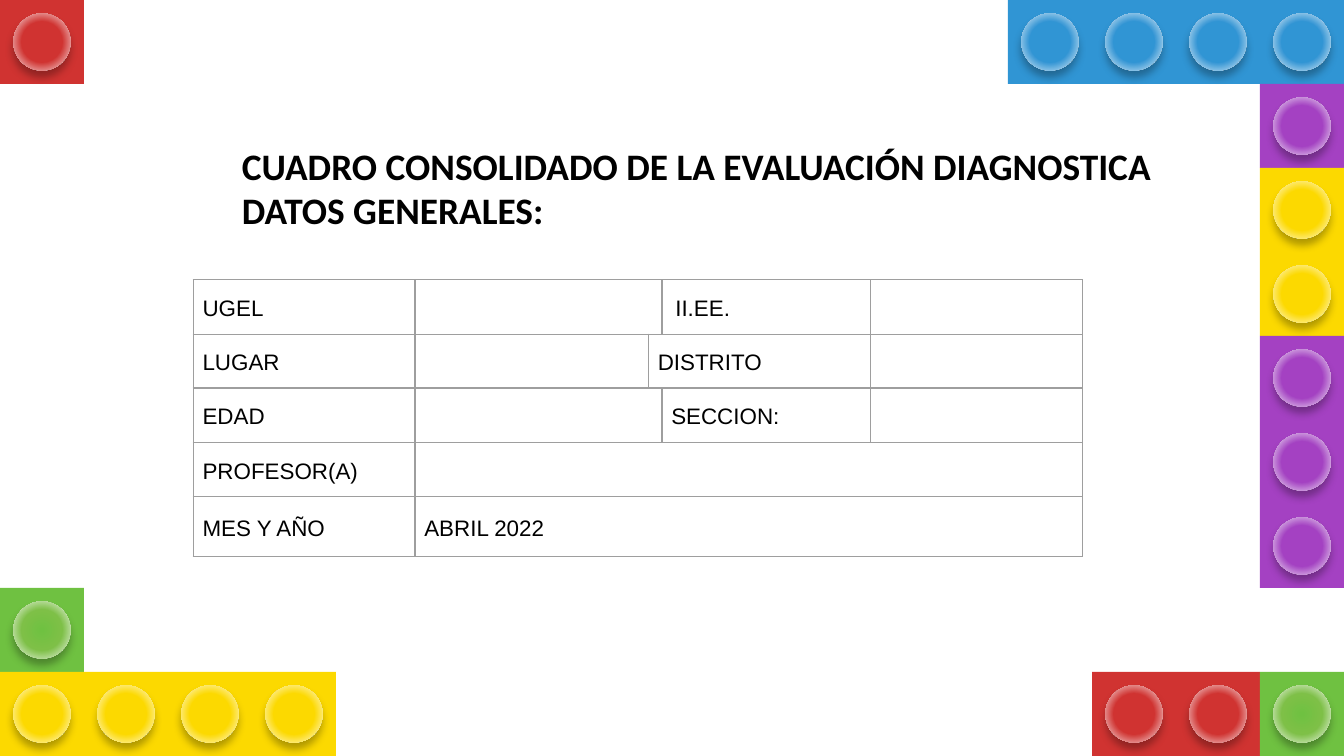
from lxml import etree
from pptx import Presentation
from pptx.dml.color import RGBColor
from pptx.enum.shapes import MSO_SHAPE
from pptx.enum.text import MSO_ANCHOR, MSO_AUTO_SIZE, PP_ALIGN
from pptx.oxml.ns import qn
from pptx.util import Inches, Pt

SQUARE, CIRCLE = MSO_SHAPE.RECTANGLE, MSO_SHAPE.OVAL
TOP, MIDDLE = MSO_ANCHOR.TOP, MSO_ANCHOR.MIDDLE
LEFT = PP_ALIGN.LEFT
NO_AUTOFIT = MSO_AUTO_SIZE.NONE
TITLE_ONLY = 5

GRID_COLUMNS, GRID_ROWS = 16, 9
SLIDE_WIDTH = Inches(10)
UNIT = SLIDE_WIDTH // GRID_COLUMNS
STUD_SIZE = 0.68
STUD_INSET = (1 - STUD_SIZE) / 2

RED, BLUE, PURPLE, YELLOW, GREEN = "D03331", "3095D4", "A441C2", "FCD900", "6FC141"
GREEN_GLOW = "7EC047"
WHITE, BLACK, GREY = "FFFFFF", "000000", "9E9E9E"

BRICKS = [
    (0, 0, 1, 1, RED),
    (12, 0, 4, 1, BLUE),
    (15, 1, 1, 1, PURPLE),
    (15, 2, 1, 2, YELLOW),
    (15, 4, 1, 3, PURPLE),
    (0, 7, 1, 1, GREEN),
    (0, 8, 4, 1, YELLOW),
    (13, 8, 2, 1, RED),
    (15, 8, 1, 1, GREEN),
]

TITLE_LINES = ["CUADRO CONSOLIDADO DE LA EVALUACIÓN DIAGNOSTICA", "DATOS GENERALES:"]
TABLE_COLUMNS = [2.64, 2.78, 0.16, 2.48, 2.53]
TABLE_ROWS = [0.65, 0.64, 0.65, 0.64, 0.72]
TABLE_TEXT = [
    ["UGEL", "", "", "II.EE.", ""],
    ["LUGAR", "", "DISTRITO", "", ""],
    ["EDAD", "", "", "SECCION:", ""],
    ["PROFESOR(A)", "", "", "", ""],
    ["MES Y AÑO", "ABRIL 2022", "", "", ""],
]
MERGES = [(0, 1, 2), (1, 2, 3), (2, 1, 2), (3, 1, 4), (4, 1, 4)]

TITLE_FONT = {"name": "Calibri", "size": Pt(20), "bold": True}
CELL_FONT = {"name": "Arial", "size": Pt(12), "bold": False}


def units(*counts):
    return [round(count * UNIT) for count in counts]


def rgb(color):
    return RGBColor.from_string(color)


def apply_format(target, values):
    for name, value in values.items():
        setattr(target, name, value)


def add_node(parent, tag, **attributes):
    node = etree.SubElement(parent, qn(tag))
    for name, value in attributes.items():
        node.set(name, str(value))
    return node


def add_color(parent, color):
    return add_node(parent, "a:srgbClr", val=color)


def write_text(para, text, font, line_spacing):
    apply_format(para, {"alignment": LEFT, "line_spacing": line_spacing})
    span = para.add_run()
    span.text = text
    apply_format(span.font, font)
    span.font.color.rgb = rgb(BLACK)


def add_plain_shape(page, kind, left, top, width, height):
    shape = page.shapes.add_shape(kind, *units(left, top, width, height))
    shape.shadow.inherit = False
    shape.line.fill.background()
    return shape


def add_stud(page, column, row, color):
    stud = add_plain_shape(
        page, CIRCLE, column + STUD_INSET, row + STUD_INSET, STUD_SIZE, STUD_SIZE
    )
    properties = stud.element.spPr
    gradient = etree.Element(qn("a:gradFill"), rotWithShape="1")
    stops = add_node(gradient, "a:gsLst")
    middle = GREEN_GLOW if color == GREEN else color
    for position, stop_color in ((0, color), (50000, middle), (100000, WHITE)):
        add_color(add_node(stops, "a:gs", pos=position), stop_color)
    focus = add_node(gradient, "a:path", path="circle")
    add_node(focus, "a:fillToRect", l=50000, t=50000, r=50000, b=50000)
    properties.find(qn("a:prstGeom")).addnext(gradient)
    shadow = add_node(
        properties.find(qn("a:effectLst")), "a:outerShdw",
        blurRad=Pt(4.5), dist=Pt(3.8), dir=5400000, algn="bl", rotWithShape=0,
    )
    add_node(add_color(shadow, BLACK), "a:alpha", val=29000)


def add_brick(page, column, row, width, height, color):
    brick = add_plain_shape(page, SQUARE, column, row, width, height)
    brick.fill.solid()
    brick.fill.fore_color.rgb = rgb(color)
    for across in range(width):
        for down in range(height):
            add_stud(page, column + across, row + down, color)


def format_title(page):
    box = page.shapes.title
    left, top, width, height, inset = units(1.94, 1.62, 12.13, 1.73, 0.94)
    apply_format(box, {"left": left, "top": top, "width": width, "height": height})
    frame = box.text_frame
    apply_format(frame, {
        "word_wrap": True, "auto_size": NO_AUTOFIT, "vertical_anchor": TOP,
        "margin_left": inset, "margin_right": 0, "margin_top": Inches(0.05),
    })
    for index, line in enumerate(TITLE_LINES):
        para = frame.add_paragraph() if index else frame.paragraphs[0]
        write_text(para, line, TITLE_FONT, 1.0)


def draw_borders(cell):
    properties = cell._tc.get_or_add_tcPr()
    for index, side in enumerate(("a:lnL", "a:lnR", "a:lnT", "a:lnB")):
        line = etree.Element(qn(side), w=str(Pt(0.75)))
        add_color(add_node(line, "a:solidFill"), GREY)
        properties.insert(index, line)


def format_cell(cell, text):
    apply_format(cell, {
        "vertical_anchor": MIDDLE, "margin_left": Inches(0.07),
        "margin_right": Inches(0.07), "margin_top": 0, "margin_bottom": 0,
    })
    cell.fill.background()
    draw_borders(cell)
    if text:
        write_text(cell.text_frame.paragraphs[0], text, CELL_FONT, 1.15)


def add_data_table(page):
    area = units(2.3, 3.33, sum(TABLE_COLUMNS), sum(TABLE_ROWS))
    table = page.shapes.add_table(len(TABLE_ROWS), len(TABLE_COLUMNS), *area).table
    apply_format(table, {"first_row": False, "horz_banding": False})
    for column, width in zip(table.columns, units(*TABLE_COLUMNS)):
        column.width = width
    for row, height in zip(table.rows, units(*TABLE_ROWS)):
        row.height = height
    for row, texts in zip(table.rows, TABLE_TEXT):
        for cell, text in zip(row.cells, texts):
            format_cell(cell, text)
    for row, first, last in MERGES:
        table.cell(row, first).merge(table.cell(row, last))
    table.cell(0, 3).margin_left = Inches(0.1)


def main():
    deck = Presentation()
    apply_format(deck, {"slide_width": SLIDE_WIDTH, "slide_height": GRID_ROWS * UNIT})
    page = deck.slides.add_slide(deck.slide_layouts[TITLE_ONLY])
    for brick in BRICKS:
        add_brick(page, *brick)
    add_data_table(page)
    format_title(page)
    deck.save("out.pptx")


if __name__ == "__main__":
    main()
